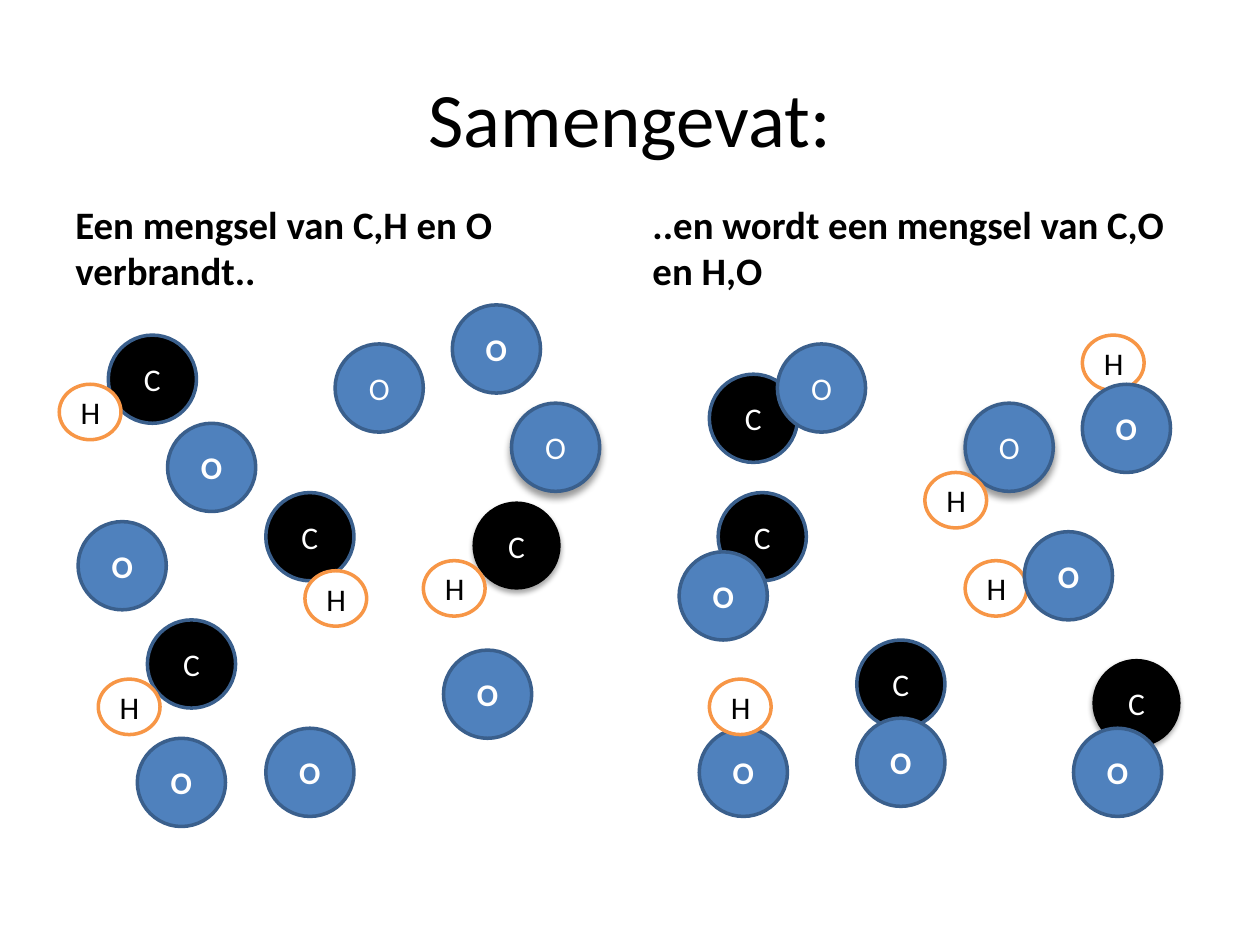
import dataclasses
import typing

import pptx
import pptx.dml.color
import pptx.enum.shapes
import pptx.enum.text
import pptx.oxml
import pptx.oxml.ns
import pptx.util

Inches = pptx.util.Inches
Pt = pptx.util.Pt
RGBColor = pptx.dml.color.RGBColor
Align = pptx.enum.text.PP_ALIGN
Anchor = pptx.enum.text.MSO_ANCHOR

BLACK = RGBColor(0x00, 0x00, 0x00)
WHITE = RGBColor(0xFF, 0xFF, 0xFF)
BLUE = RGBColor(0x4F, 0x81, 0xBD)
NAVY = RGBColor(0x3A, 0x5F, 0x8C)
ORANGE = RGBColor(0xF7, 0x96, 0x46)
FONT = "Calibri"


@dataclasses.dataclass(frozen=True)
class Shade:
    alpha: int
    blur: float
    dist: float


@dataclasses.dataclass(frozen=True)
class Atom:
    sign: str
    fill: RGBColor
    line: typing.Optional[RGBColor]
    ink: RGBColor = WHITE
    bold: bool = False
    wide: float = 0.7
    high: float = 0.7
    shade: typing.Optional[Shade] = None


@dataclasses.dataclass(frozen=True)
class Label:
    text: str
    box: tuple[float, float, float, float]
    size: float
    bold: bool
    align: Align
    anchor: Anchor


# Kinds of atom
C = Atom("C", BLACK, NAVY)
C_SHADE = Atom("C", BLACK, None, shade=Shade(35, 3.1, 1.8))
O = Atom("O", BLUE, NAVY)
O_BOLD = dataclasses.replace(O, bold=True)
O_SHADE = dataclasses.replace(O, shade=Shade(40, 4, 3))
H = Atom("H", WHITE, ORANGE, ink=BLACK, wide=0.49, high=0.44)

# Atoms from back to front: kind, left, top
AFTER = [
    (C, 5.63, 2.97), (O, 6.17, 2.73), (O_BOLD, 5.55, 5.78),
    (O_SHADE, 7.66, 3.2), (C, 5.7, 3.91), (C_SHADE, 8.67, 5.23),
    (C, 6.8, 5.08), (H, 5.63, 5.39), (H, 7.34, 3.75), (H, 8.59, 2.66),
    (O_BOLD, 8.59, 3.05), (O_BOLD, 5.39, 4.38), (O_BOLD, 8.52, 5.78),
    (O_BOLD, 6.8, 5.7), (H, 7.66, 4.45), (O_BOLD, 8.13, 4.22),
]
BEFORE = [
    (C, 0.86, 2.66), (O, 2.66, 2.73), (O_BOLD, 2.11, 5.78),
    (O_SHADE, 4.06, 3.2), (C, 2.11, 3.91), (C_SHADE, 3.75, 3.98),
    (C, 1.17, 4.92), (H, 0.78, 5.39), (H, 2.42, 4.53), (H, 3.36, 4.45),
    (H, 0.47, 3.05), (O_BOLD, 3.59, 2.42), (O_BOLD, 3.52, 5.16),
    (O_BOLD, 1.33, 3.36), (O_BOLD, 1.09, 5.86), (O_BOLD, 0.62, 4.14),
]

LABELS = [
    Label("Samengevat:", (0.5, 0.3, 9, 1.25), 44, False,
          Align.CENTER, Anchor.MIDDLE),
    Label("Een mengsel van C,H en O verbrandt..", (0.5, 1.68, 4.42, 0.7),
          22.2, True, Align.LEFT, Anchor.BOTTOM),
    Label("..en wordt een mengsel van C,O en H,O", (5.08, 1.68, 4.42, 0.7),
          22.2, True, Align.LEFT, Anchor.BOTTOM),
]


def write(shape, text: str, size: float, ink: RGBColor, bold: bool,
          align: Align, anchor: Anchor) -> None:
    frame = shape.text_frame
    frame.word_wrap = True
    frame.vertical_anchor = anchor
    para = frame.paragraphs[0]
    para.alignment = align
    run = para.add_run()
    run.text = text
    run.font.name = FONT
    run.font.size = Pt(size)
    run.font.bold = bold
    run.font.color.rgb = ink


def cast(shape, shade: Shade) -> None:
    """Add a soft black shadow that falls straight down."""
    effects = shape.element.spPr.find(pptx.oxml.ns.qn("a:effectLst"))
    effects.append(pptx.oxml.parse_xml(
        f'<a:outerShdw {pptx.oxml.ns.nsdecls("a")} blurRad="{Pt(shade.blur)}"'
        f' dist="{Pt(shade.dist)}" dir="5400000" rotWithShape="0">'
        f'<a:srgbClr val="{BLACK}"><a:alpha val="{shade.alpha * 1000}"/>'
        '</a:srgbClr></a:outerShdw>'))


def draw_atom(slide, atom: Atom, left: float, top: float) -> None:
    shape = slide.shapes.add_shape(
        pptx.enum.shapes.MSO_SHAPE.OVAL, Inches(left), Inches(top),
        Inches(atom.wide), Inches(atom.high))
    shape.fill.solid()
    shape.fill.fore_color.rgb = atom.fill
    if atom.line is None:
        shape.line.fill.background()
    else:
        shape.line.color.rgb = atom.line
        shape.line.width = Pt(2)
    shape.shadow.inherit = False
    if atom.shade:
        cast(shape, atom.shade)
    write(shape, atom.sign, 18, atom.ink, atom.bold,
          Align.CENTER, Anchor.MIDDLE)


def draw_label(slide, label: Label) -> None:
    box = slide.shapes.add_textbox(*map(Inches, label.box))
    write(box, label.text, label.size, BLACK, label.bold,
          label.align, label.anchor)


def main() -> None:
    deck = pptx.Presentation()
    deck.slide_width, deck.slide_height = Inches(10), Inches(7.5)
    slide = deck.slides.add_slide(deck.slide_layouts[6])

    # Title and column heads
    for label in LABELS:
        draw_label(slide, label)

    # Atoms after and before burning
    for atom, left, top in AFTER + BEFORE:
        draw_atom(slide, atom, left, top)

    deck.save("out.pptx")


if __name__ == "__main__":
    main()
